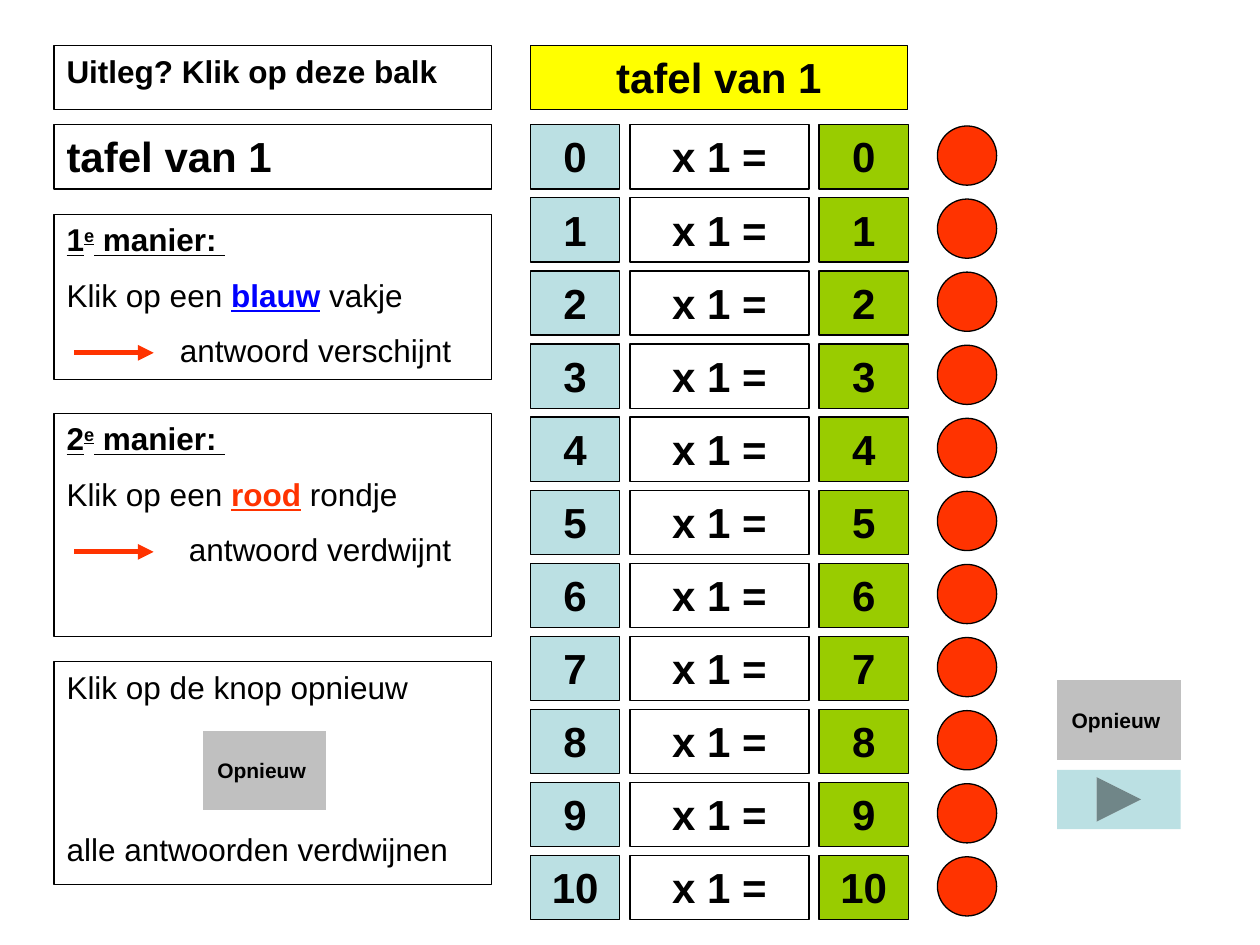
import pptx
import pptx.util
import pptx.dml.color
import pptx.enum.shapes
import pptx.enum.text
import pptx.oxml
import pptx.oxml.ns

Inches, Pt = pptx.util.Inches, pptx.util.Pt
SHAPE = pptx.enum.shapes.MSO_SHAPE
ALIGN = pptx.enum.text.PP_ALIGN
ANCHOR = pptx.enum.text.MSO_ANCHOR

COLORS = {
    "black": "000000", "white": "FFFFFF", "yellow": "FFFF00",
    "light_blue": "BBE0E3", "green": "99CC00", "red": "FF3300",
    "blue": "0000FF", "grey": "C0C0C0",
}
ROW_TOP, ROW_STEP, ROW_COUNT = 0.99, 0.58, 11
ROW_H = 0.51
LEFT, LEFT_W = 0.43, 3.47


def rgb(name):
    return pptx.dml.color.RGBColor.from_string(COLORS[name])


def add_shape(s, kind, x, y, w, h, fill=None, line="black"):
    sp = s.shapes.add_shape(kind, Inches(x), Inches(y), Inches(w), Inches(h))
    sp.shadow.inherit = False
    if fill:
        sp.fill.solid()
        sp.fill.fore_color.rgb = rgb(fill)
    else:
        sp.fill.background()
    if line:
        sp.line.color.rgb = rgb(line)
        sp.line.width = Pt(0.75)
    else:
        sp.line.fill.background()
    return sp


def add_run(p, text, size=18, color="black", bold=False, underline=False, raised=False):
    r = p.add_run()
    r.text = text
    r.font.name = "Arial"
    r.font.size = Pt(size)
    r.font.bold = bold
    r.font.underline = underline
    r.font.color.rgb = rgb(color)
    if raised:
        r.font._element.set("baseline", "30000")


def add_paragraph(tf, first=False, align=ALIGN.LEFT, before=10, indent=0):
    p = tf.paragraphs[0] if first else tf.add_paragraph()
    p.alignment = align
    if not first:
        p.space_before = Pt(before)
    if indent:
        p._p.get_or_add_pPr().set("marL", str(Inches(indent)))
    return p


def add_box(s, x, y, w, h, fill=None):
    """Outlined text box, text starting at the top."""
    tf = add_shape(s, SHAPE.RECTANGLE, x, y, w, h, fill).text_frame
    tf.word_wrap = True
    tf.vertical_anchor = ANCHOR.TOP
    return tf


def add_label(s, x, y, w, text, fill=None, size=24, align=ALIGN.CENTER):
    tf = add_box(s, x, y, w, ROW_H, fill)
    add_run(add_paragraph(tf, True, align), text, size, bold=True)


def add_arrow(s, y):
    c = s.shapes.add_connector(pptx.enum.shapes.MSO_CONNECTOR.STRAIGHT,
                               Inches(0.59), Inches(y), Inches(1.22), Inches(y))
    c.line.color.rgb = rgb("red")
    c.line.width = Pt(3)
    ln = c.line._get_or_add_ln()
    tail = pptx.oxml.parse_xml(
        '<a:tailEnd %s type="triangle"/>' % pptx.oxml.ns.nsdecls("a"))
    ln.append(tail)
    c._element.spPr.append(pptx.oxml.parse_xml(
        "<a:effectLst %s/>" % pptx.oxml.ns.nsdecls("a")))


def add_method(s, y, h, number, word, color, target, result, indent):
    """Explanation of one way to practise, with its arrow."""
    tf = add_box(s, LEFT, y, LEFT_W, h)
    p = add_paragraph(tf, True)
    add_run(p, number, bold=True, underline=True)
    add_run(p, "e", bold=True, underline=True, raised=True)
    add_run(p, " manier: ", bold=True, underline=True)
    p = add_paragraph(tf)
    add_run(p, "Klik op een ")
    add_run(p, word, color=color, bold=True, underline=True)
    add_run(p, " " + target)
    add_run(add_paragraph(tf, indent=indent), result)
    add_arrow(s, y + 1.1)


def add_restart_button(s, x, y):
    sp = add_shape(s, SHAPE.ACTION_BUTTON_CUSTOM, x, y, 0.98, 0.63, "grey", None)
    tf = sp.text_frame
    tf.word_wrap = False
    tf.vertical_anchor = ANCHOR.MIDDLE
    add_run(add_paragraph(tf, True, ALIGN.CENTER), "Opnieuw ", 12, bold=True)


def add_table_row(s, n):
    y = ROW_TOP + n * ROW_STEP
    add_label(s, 4.21, y, 0.71, str(n), "light_blue")
    add_label(s, 5, y, 1.42, "x 1 =", "white")
    add_label(s, 6.5, y, 0.71, str(n), "green")
    add_shape(s, SHAPE.OVAL, 7.44, y + 0.01, 0.47, 0.47, "red")


def main():
    prs = pptx.Presentation()
    prs.slide_width, prs.slide_height = Inches(10), Inches(7.5)
    s = prs.slides.add_slide(prs.slide_layouts[6])

    # Multiplication table
    add_label(s, 4.21, 0.36, 2.99, "tafel van 1", "yellow")
    for n in range(ROW_COUNT):
        add_table_row(s, n)

    # Explanation column
    add_label(s, LEFT, 0.36, LEFT_W, "Uitleg? Klik op deze balk", size=18, align=ALIGN.LEFT)
    add_label(s, LEFT, ROW_TOP, LEFT_W, "tafel van 1", align=ALIGN.LEFT)
    add_method(s, 1.7, 1.31, "1", "blauw", "blue", "vakje", "antwoord verschijnt", 0.9)
    add_method(s, 3.28, 1.77, "2", "rood", "red", "rondje", "antwoord verdwijnt", 0.97)

    # Restart explanation, with room for the button between the lines
    tf = add_box(s, LEFT, 5.25, LEFT_W, 1.77)
    add_run(add_paragraph(tf, True), "Klik op de knop opnieuw")
    add_run(add_paragraph(tf, before=71), "alle antwoorden verdwijnen")
    add_restart_button(s, 1.61, 5.8)

    # Navigation
    add_restart_button(s, 8.39, 5.4)
    add_shape(s, SHAPE.ACTION_BUTTON_FORWARD_OR_NEXT, 8.39, 6.11, 0.98, 0.47, "light_blue", None)

    prs.save("out.pptx")


if __name__ == "__main__":
    main()
